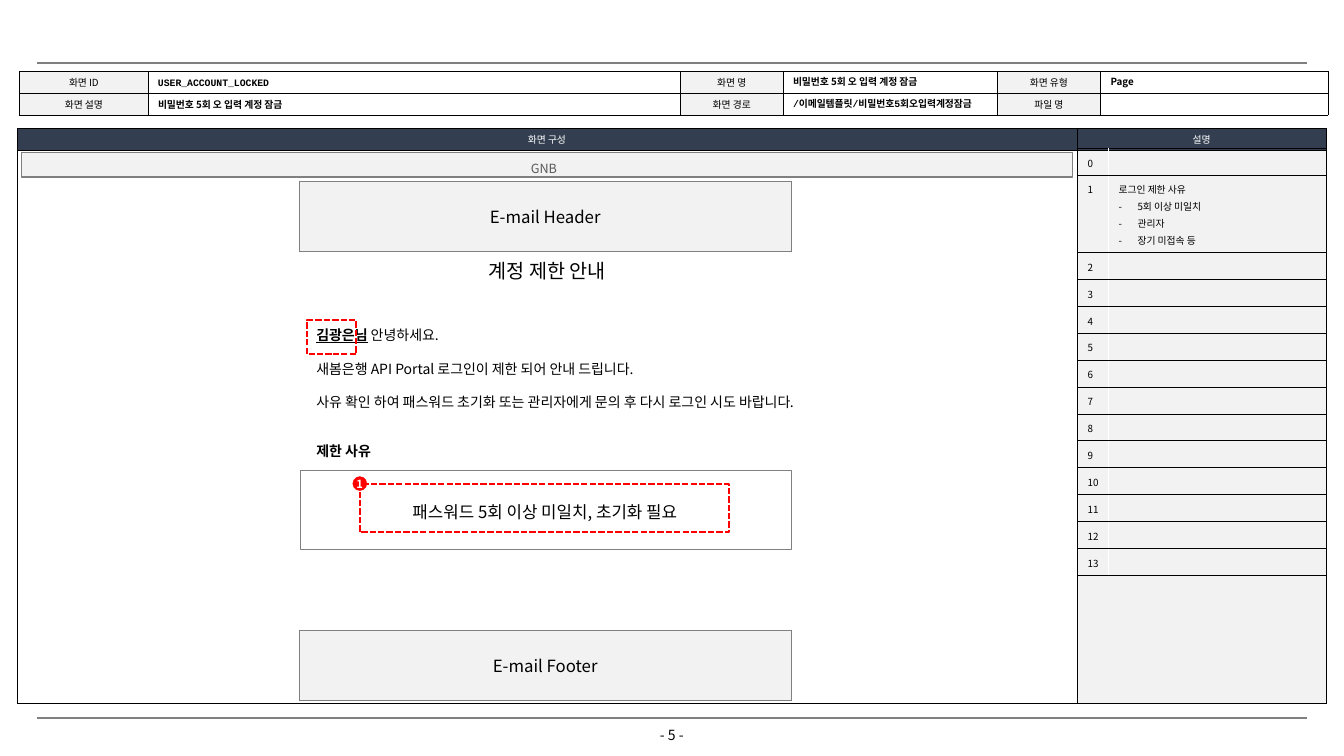
from dataclasses import dataclass, replace
from typing import Optional

from lxml.etree import SubElement
from pptx import Presentation
from pptx.dml.color import RGBColor
from pptx.enum.dml import MSO_LINE
from pptx.enum.shapes import MSO_CONNECTOR, MSO_SHAPE
from pptx.enum.text import MSO_ANCHOR, PP_ALIGN
from pptx.oxml.ns import qn
from pptx.util import Pt

BLACK = RGBColor(0x00, 0x00, 0x00)
WHITE = RGBColor(0xFF, 0xFF, 0xFF)
RED = RGBColor(0xFF, 0x00, 0x00)
NAVY = RGBColor(0x33, 0x3F, 0x50)
PALE = RGBColor(0xF2, 0xF2, 0xF2)
GRAY = RGBColor(0x80, 0x80, 0x80)
DARK_GRAY = RGBColor(0x59, 0x59, 0x59)
KOREAN_FONT = "Noto Sans CJK KR"
LEFT, CENTER = PP_ALIGN.LEFT, PP_ALIGN.CENTER
DETAIL_LINE = 12
DETAIL_ROW = 19.2


@dataclass(frozen=True)
class Style:
    size: float
    color: RGBColor = BLACK
    bold: bool = False
    align: PP_ALIGN = LEFT
    latin: str = KOREAN_FONT


@dataclass(frozen=True)
class Area:
    left: float
    top: float
    width: float
    height: float

    def lengths(self) -> tuple:
        return Pt(self.left), Pt(self.top), Pt(self.width), Pt(self.height)


@dataclass(frozen=True)
class Border:
    color: RGBColor
    width: float


@dataclass(frozen=True)
class Panel:
    area: Area
    line: Border
    fill: Optional[RGBColor] = None
    dashed: bool = False
    kind: MSO_SHAPE = MSO_SHAPE.RECTANGLE


@dataclass(frozen=True)
class Value:
    text: str
    area: Area
    style: Style


SMALL = Style(7)
LABEL = replace(SMALL, align=CENTER)
BOLD = replace(SMALL, bold=True)
CODE = replace(BOLD, latin="Courier New")
BODY = Style(10)
LARGE = Style(12, align=CENTER)
HAIRLINE = Border(BLACK, 0.25)
WHITE_LINE = Border(WHITE, 0.5)
RULE_LINE = Border(GRAY, 1.5)
MARKER_LINE = Border(RED, 1.5)
VALUES = [
    Value("USER_ACCOUNT_LOCKED", Area(105.8, 50.4, 377.3, 17.3), CODE),
    Value("비밀번호 5회 오 입력 계정 잠금", Area(105.8, 67, 378, 15.8), BOLD),
    Value("비밀번호 5회 오 입력 계정 잠금", Area(559.4, 50.4, 153.4, 15.1), BOLD),
    Value("/이메일템플릿/비밀번호5회오입력계정잠금", Area(559.4, 65.5, 153.4, 16.6), CODE),
    Value("Page", Area(786.2, 50.4, 162.7, 15.8), BOLD),
]


def style_run(run, style: Style) -> None:
    run.font.size = Pt(style.size)
    run.font.bold = style.bold
    run.font.color.rgb = style.color
    run.font.name = style.latin
    run.font._element.set("kern", "0")
    SubElement(run.font._element, qn("a:ea"), typeface=KOREAN_FONT)


def write(frame, text: str, style: Style) -> None:
    frame.text = text
    for paragraph in frame.paragraphs:
        paragraph.alignment = style.align
        for run in paragraph.runs:
            style_run(run, style)
        if not paragraph.runs:
            SubElement(paragraph._p, qn("a:endParaRPr"), sz=str(int(style.size * 100)))


def set_margins(frame, side: float, end: float) -> None:
    frame.margin_left = frame.margin_right = Pt(side)
    frame.margin_top = frame.margin_bottom = Pt(end)


def add_text(slide, area: Area, text: str, style: Style, anchor=MSO_ANCHOR.MIDDLE):
    frame = slide.shapes.add_textbox(*area.lengths()).text_frame
    frame.word_wrap = True
    frame.vertical_anchor = anchor
    write(frame, text, style)
    return frame


def add_panel(slide, panel: Panel):
    shape = slide.shapes.add_shape(panel.kind, *panel.area.lengths())
    shape.shadow.inherit = False
    if panel.fill is None:
        shape.fill.background()
    else:
        shape.fill.solid()
        shape.fill.fore_color.rgb = panel.fill
    shape.line.color.rgb = panel.line.color
    shape.line.width = Pt(panel.line.width)
    if panel.dashed:
        shape.line.dash_style = MSO_LINE.SQUARE_DOT
    return shape.text_frame


def add_grid(slide, left: float, top: float, columns: list, rows: list):
    area = Area(left, top, sum(columns), sum(rows))
    table = slide.shapes.add_table(len(rows), len(columns), *area.lengths()).table
    table.first_row = table.horz_banding = False
    for column, width in zip(table.columns, columns):
        column.width = Pt(width)
    for row, height in zip(table.rows, rows):
        row.height = Pt(height)
    return table


def format_cell(cell, text: str, style: Style, fill: Optional[RGBColor], edges: dict) -> None:
    write(cell.text_frame, text, style)
    cell.vertical_anchor = MSO_ANCHOR.MIDDLE
    set_margins(cell, 7.2, 0)
    properties = cell._tc.get_or_add_tcPr()
    for side in "LRTB":
        border = edges.get(side)
        line = SubElement(properties, qn(f"a:ln{side}"))
        if border is None:
            SubElement(line, qn("a:noFill"))
        else:
            line.set("w", str(Pt(border.width)))
            SubElement(SubElement(line, qn("a:solidFill")), qn("a:srgbClr"), val=str(border.color))
    if fill is None:
        cell.fill.background()
    else:
        cell.fill.solid()
        cell.fill.fore_color.rgb = fill


def add_page_edges(slide) -> None:
    rule = slide.shapes.add_connector(MSO_CONNECTOR.STRAIGHT, Pt(26.6), Pt(44.8), Pt(933.8), Pt(44.8))
    rule.line.color.rgb = RULE_LINE.color
    rule.line.width = Pt(RULE_LINE.width)
    SubElement(rule._element.spPr, qn("a:effectLst"))
    footer = add_grid(slide, 26.6, 512.6, [453.6] * 2, [15.1])
    for cell in footer.iter_cells():
        format_cell(cell, "", SMALL, None, {"T": RULE_LINE})
    page_number = add_text(slide, Area(440.6, 519, 78.5, 12.4), "- 5 -", replace(BODY, align=CENTER))
    set_margins(page_number, 0, 0)


def add_screen_info(slide) -> None:
    labels = [["화면 ID", "", "화면 명", "", "화면 유형", ""],
              ["화면 설명", "", "화면 경로", "", "파일 명", ""]]
    table = add_grid(slide, 13.8, 51, [92.2, 380, 73.4, 153.2, 73.4, 162.7], [15.7] * 2)
    for row, texts in enumerate(labels):
        for column, text in enumerate(texts):
            fill = PALE if text else None
            format_cell(table.cell(row, column), text, LABEL, fill, dict.fromkeys("LRTB", HAIRLINE))
    for value in VALUES:
        set_margins(add_text(slide, value.area, value.text, value.style), 7.2, 0)


def add_screen_frame(slide) -> None:
    heading = replace(LABEL, color=WHITE)
    table = add_grid(slide, 12.2, 91.8, [757, 178.3], [15.6, 395])
    for column, (text, fill) in enumerate([("화면 구성", None), ("설명", PALE)]):
        edges = dict.fromkeys("LRTB", HAIRLINE)
        format_cell(table.cell(0, column), text, heading, NAVY, edges)
        format_cell(table.cell(1, column), "", SMALL, fill, edges)


def add_descriptions(slide) -> None:
    notes = {1: ["로그인 제한 사유", "5회 이상 미일치", "관리자", "장기 미접속 등"]}
    heights = [DETAIL_ROW + DETAIL_LINE * (len(notes.get(n, [""])) - 1) for n in range(14)]
    table = add_grid(slide, 769.7, 105.8, [22.2, 155.6], heights)
    edges = {"T": HAIRLINE, "B": HAIRLINE}
    for number in range(14):
        texts = [str(number), "\n".join(notes.get(number, []))]
        for column, side in enumerate("RL"):
            cell = table.cell(number, column)
            format_cell(cell, texts[column], SMALL, None, {**edges, side: WHITE_LINE})
            cell.vertical_anchor = MSO_ANCHOR.TOP
            set_margins(cell, 7.2, 3.6)
            for index, paragraph in enumerate(cell.text_frame.paragraphs):
                paragraph.line_spacing = Pt(DETAIL_LINE)
                if index:
                    properties = paragraph._p.get_or_add_pPr()
                    properties.set("marL", str(Pt(13.5)))
                    properties.set("indent", str(-Pt(13.5)))
                    SubElement(properties, qn("a:buFont"), typeface=KOREAN_FONT)
                    SubElement(properties, qn("a:buChar"), char="-")


def add_mail(slide) -> None:
    for text, top in (("E-mail Header", 129.6), ("E-mail Footer", 450)):
        block = add_grid(slide, 213.8, top, [351.4], [50.2])
        format_cell(block.cell(0, 0), text, LARGE, PALE, dict.fromkeys("LRTB", Border(GRAY, 0.5)))

    message = add_text(slide, Area(218.9, 229.7, 374.4, 80),
                       "김광은님\n새봄은행 API Portal 로그인이 제한 되어 안내 드립니다.\n"
                       "사유 확인 하여 패스워드 초기화 또는 관리자에게 문의 후 다시 로그인 시도 바랍니다.",
                       BODY, MSO_ANCHOR.TOP)
    greeting, *sentences = message.paragraphs
    greeting.runs[0].font.bold = greeting.runs[0].font.underline = True
    welcome = greeting.add_run()
    welcome.text = " 안녕하세요."
    style_run(welcome, BODY)
    for sentence in sentences:
        sentence.space_before = Pt(12)

    add_panel(slide, Panel(Area(219.3, 228.7, 35.3, 24.5), MARKER_LINE, dashed=True))
    add_panel(slide, Panel(Area(214.6, 336, 350.6, 56.6), Border(GRAY, 0.25), WHITE))
    add_text(slide, Area(230.4, 354.6, 317.5, 21.6), "패스워드 5회 이상 미일치, 초기화 필요", LARGE)
    add_panel(slide, Panel(Area(257, 345.6, 263.5, 34.6), MARKER_LINE, dashed=True))
    badge = add_panel(slide, Panel(Area(252, 340.4, 10, 10), Border(RED, 0.25), RED, kind=MSO_SHAPE.OVAL))
    set_margins(badge, 0, 0)
    badge.word_wrap = False
    badge.vertical_anchor = MSO_ANCHOR.MIDDLE
    write(badge, "1", Style(8, WHITE, True, CENTER))
    add_text(slide, Area(218.9, 312.5, 374.4, 19.4), "제한 사유", replace(BODY, bold=True))


def main() -> None:
    deck = Presentation()
    deck.slide_width, deck.slide_height = Pt(960), Pt(540)
    slide = deck.slides.add_slide(deck.slide_layouts[5])

    title = slide.shapes.title
    title.left, title.top, title.width, title.height = Area(336.2, 181.4, 109.4, 24.5).lengths()
    title.text_frame.word_wrap = False
    title.text_frame.vertical_anchor = MSO_ANCHOR.MIDDLE
    write(title.text_frame, "계정 제한 안내", Style(14, align=CENTER))

    add_page_edges(slide)
    add_screen_frame(slide)
    add_screen_info(slide)
    add_descriptions(slide)
    navigation = add_panel(slide, Panel(Area(15.1, 109.2, 751, 17.3), Border(GRAY, 0.75), PALE))
    navigation.vertical_anchor = MSO_ANCHOR.MIDDLE
    set_margins(navigation, 3, 0)
    navigation.margin_right = Pt(7.2)
    write(navigation, "GNB", Style(9, DARK_GRAY, align=CENTER))
    navigation.paragraphs[0].line_spacing = 1.5
    add_mail(slide)
    deck.save("out.pptx")


if __name__ == "__main__":
    main()
